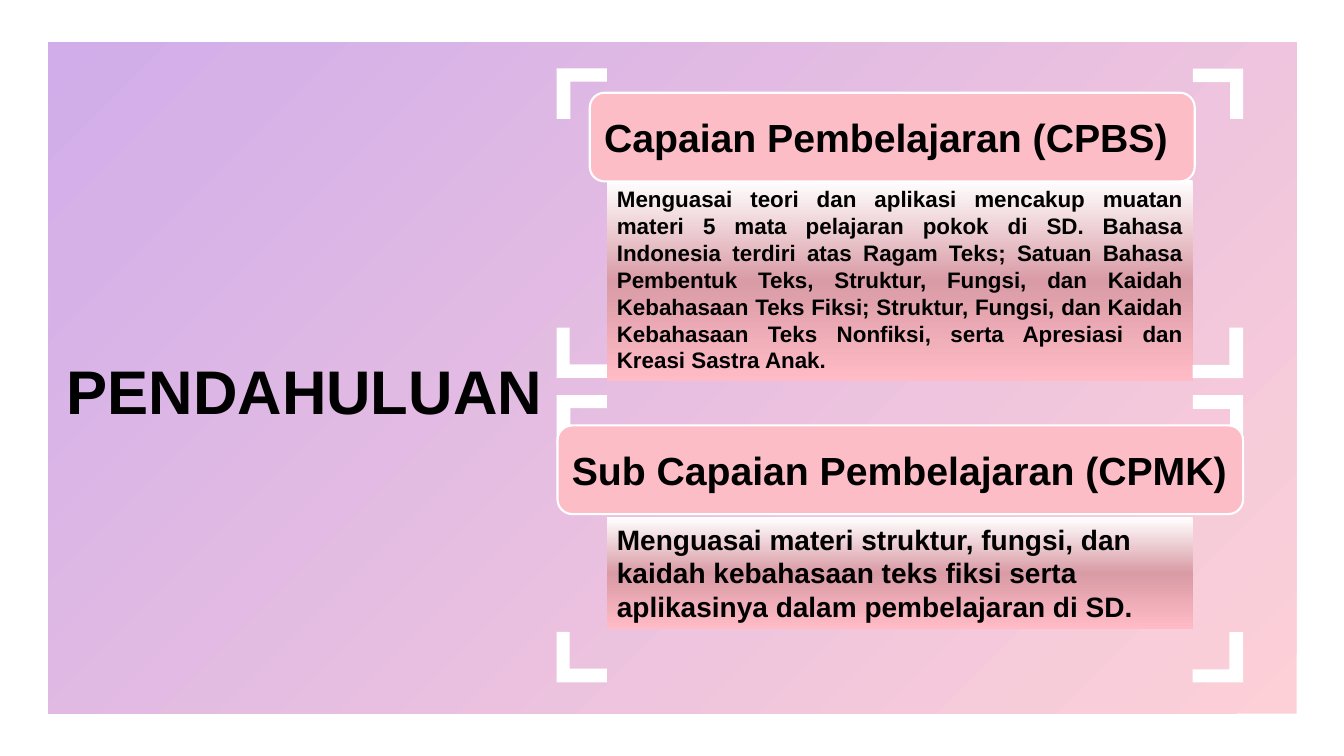
from dataclasses import dataclass

from pptx import Presentation
from pptx.dml.color import RGBColor
from pptx.enum.shapes import MSO_SHAPE
from pptx.enum.text import MSO_ANCHOR, MSO_AUTO_SIZE, PP_ALIGN
from pptx.oxml import parse_xml
from pptx.oxml.ns import nsdecls, qn
from pptx.util import Inches, Pt


@dataclass(frozen=True)
class Theme:
    font: str = "Arial"
    ink: str = "000000"
    white: str = "FFFFFF"
    pink: str = "FDBDC7"
    title_size: int = 44
    heading_size: int = 28
    # Gradient stops: position, colour, opacity (all percentages but the colour)
    backdrop: tuple = ((0, "FDBDC7", 70), (100, "BE8BE2", 70))
    panel: tuple = ((0, "FFFFFF", 100), (50, "D99BA5", 100), (100, "FFBBC6", 100))


THEME = Theme()
CORNER_SIZE = 0.5


def add_box(page, kind, box, color=None, outline=None):
    shape = page.shapes.add_shape(kind, *map(Inches, box))
    shape.shadow.inherit = False
    if color:
        shape.fill.solid()
        shape.fill.fore_color.rgb = RGBColor.from_string(color)
    if outline:
        shape.line.color.rgb = RGBColor.from_string(outline)
        shape.line.width = Pt(1.5)
    else:
        shape.line.fill.background()
    return shape


def fill_gradient(shape, stops, angle):
    """Fill with a linear gradient; the angle runs clockwise in degrees."""
    stop_xml = "".join(
        f'<a:gs pos="{position * 1000}"><a:srgbClr val="{color}">'
        f'<a:alpha val="{opacity * 1000}"/></a:srgbClr></a:gs>'
        for position, color, opacity in stops
    )
    gradient = parse_xml(
        f'<a:gradFill {nsdecls("a")} rotWithShape="1"><a:gsLst>{stop_xml}</a:gsLst>'
        f'<a:lin ang="{angle * 60000}" scaled="0"/></a:gradFill>'
    )
    shape.fill.background()
    properties = shape.element.spPr
    properties.replace(properties.find(qn("a:noFill")), gradient)


def write_text(shape, text, size, align=PP_ALIGN.LEFT, anchor=MSO_ANCHOR.MIDDLE):
    frame = shape.text_frame
    frame.text = text
    frame.word_wrap = True
    frame.vertical_anchor = anchor
    para = frame.paragraphs[0]
    para.alignment = align
    font = para.runs[0].font
    font.name, font.size, font.bold = THEME.font, Pt(size), True
    font.color.rgb = RGBColor.from_string(THEME.ink)
    return para


def add_backdrop(page, box):
    fill_gradient(add_box(page, MSO_SHAPE.RECTANGLE, box), THEME.backdrop, 225)


def add_title(page, box):
    title = page.shapes.title
    title.left, title.top, title.width, title.height = map(Inches, box)
    para = write_text(title, "PENDAHULUAN", THEME.title_size)
    para.line_spacing = 1.1
    para.space_before = Pt(9)
    title.text_frame.auto_size = MSO_AUTO_SIZE.NONE
    # Bring the title in front of the backdrop
    title.element.getparent().append(title.element)


def add_corners(page, box):
    left, top, width, height = box
    right, bottom = left + width - CORNER_SIZE, top + height - CORNER_SIZE
    for x, y, rotation in ((left, bottom, 0), (left, top, 90),
                           (right, top, 180), (right, bottom, 270)):
        corner = add_box(page, MSO_SHAPE.CORNER,
                         (x, y, CORNER_SIZE, CORNER_SIZE), THEME.white)
        corner.adjustments[0], corner.adjustments[1] = 0.271, 0.26
        corner.rotation = rotation


def add_section(page, box, heading, heading_box, body, body_box, body_size, align):
    """Place a framed section; inner boxes are relative to its top left."""
    left, top = box[:2]

    def inside(inner):
        return (left + inner[0], top + inner[1], *inner[2:])

    # Body panel
    panel = add_box(page, MSO_SHAPE.RECTANGLE, inside(body_box))
    fill_gradient(panel, THEME.panel, 90)
    write_text(panel, body, body_size, align, MSO_ANCHOR.TOP)
    panel.text_frame.auto_size = MSO_AUTO_SIZE.SHAPE_TO_FIT_TEXT

    # Corner brackets
    add_corners(page, box)

    # Heading plate
    plate = add_box(page, MSO_SHAPE.ROUNDED_RECTANGLE, inside(heading_box),
                    THEME.pink, THEME.white)
    write_text(plate, heading, THEME.heading_size)


def build_introduction(deck):
    page = deck.slides.add_slide(deck.slide_layouts[5])
    add_backdrop(page, (0.48, 0.42, 12.38, 6.66))
    add_title(page, (0.56, 2.85, 5.03, 1.96))
    add_section(
        page, (5.52, 0.68, 6.81, 3.07),
        "Capaian Pembelajaran (CPBS)", (0.33, 0.24, 6, 0.88),
        "Menguasai teori dan aplikasi mencakup muatan materi 5 mata pelajaran "
        "pokok di SD. Bahasa Indonesia terdiri atas Ragam Teks; Satuan Bahasa "
        "Pembentuk Teks, Struktur, Fungsi, dan Kaidah Kebahasaan Teks Fiksi; "
        "Struktur, Fungsi, dan Kaidah Kebahasaan Teks Nonfiksi, serta Apresiasi "
        "dan Kreasi Sastra Anak.",
        (0.5, 1.11, 5.81, 1.99), 16, PP_ALIGN.JUSTIFY,
    )
    add_section(
        page, (5.52, 3.92, 6.81, 2.85),
        "Sub Capaian Pembelajaran (CPMK)", (0.01, 0.3, 6.8, 0.88),
        "Menguasai materi struktur, fungsi, dan kaidah kebahasaan teks fiksi "
        "serta aplikasinya dalam pembelajaran di SD.",
        (0.5, 1.21, 5.81, 1.11), 20, PP_ALIGN.LEFT,
    )


def main():
    deck = Presentation()
    deck.slide_width, deck.slide_height = Inches(13.33), Inches(7.5)
    build_introduction(deck)
    deck.save("out.pptx")


if __name__ == "__main__":
    main()
